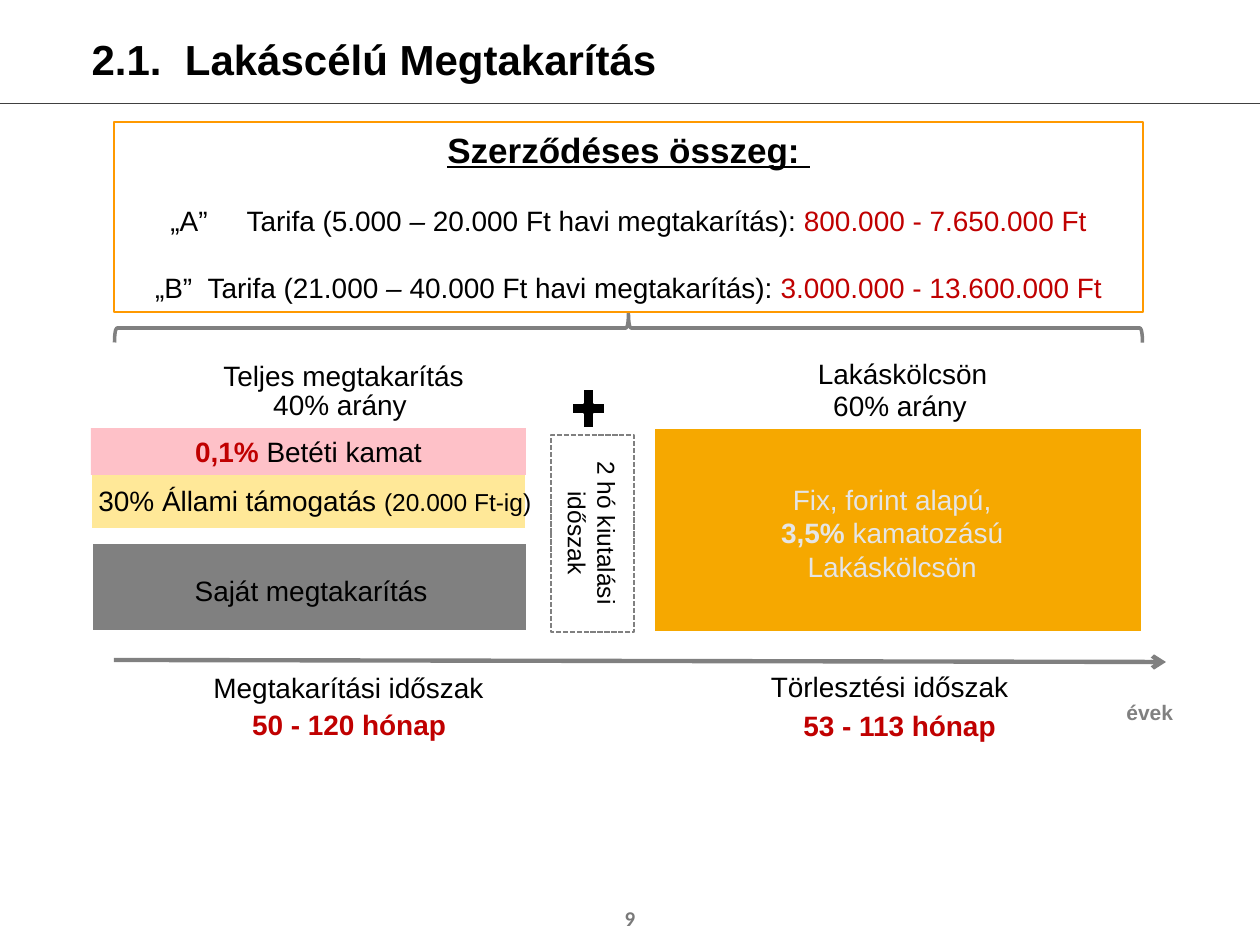
"""Build the home savings slide: contract sum, its two parts and the timeline."""
from dataclasses import dataclass
from typing import Optional

import pptx
import pptx.dml.color
import pptx.enum.dml
import pptx.enum.shapes
import pptx.enum.text
import pptx.oxml
import pptx.oxml.ns
import pptx.util

PX_PER_INCH = 126
SHAPE = pptx.enum.shapes.MSO_SHAPE
ALIGN = pptx.enum.text.PP_ALIGN
ANCHOR = pptx.enum.text.MSO_ANCHOR


@dataclass(frozen=True)
class Theme:
    font: str = "Arial"
    number_font: str = "Calibri"
    ink: str = "000000"
    red: str = "C00000"
    grey: str = "808080"
    number_grey: str = "797979"
    pale: str = "E5E5E5"
    white: str = "FFFFFF"
    rule: str = "404040"
    orange: str = "F6A800"
    frame: str = "FF9900"
    yellow: str = "FFE898"
    pink: str = "FEC1C8"
    title: int = 24
    heading: int = 20
    body: int = 16
    note: int = 14
    small: int = 12


THEME = Theme()


@dataclass(frozen=True)
class Box:
    left: int
    top: int
    width: int
    height: int
    rotation: int = 0


@dataclass(frozen=True)
class Span:
    text: str
    color: str = THEME.ink
    size: int = THEME.body
    bold: bool = False
    italic: bool = False
    underline: bool = False
    font: str = THEME.font
    tracking: int = 0


@dataclass(frozen=True)
class Label:
    box: Box
    lines: list[list[Span]]
    align: ALIGN = ALIGN.CENTER
    anchor: ANCHOR = ANCHOR.TOP
    wrap: bool = True


@dataclass(frozen=True)
class Block:
    box: Box
    fill: Optional[str] = None
    line: Optional[str] = None
    width: float = 1
    kind: SHAPE = SHAPE.RECTANGLE


def px(length: int) -> pptx.util.Emu:
    """Turn pixels into EMU."""
    return pptx.util.Emu(round(length * 914400 / PX_PER_INCH))


def rgb(color: str) -> pptx.dml.color.RGBColor:
    """Turn a hex string into a colour."""
    return pptx.dml.color.RGBColor.from_string(color)


def place(shape, box: Box) -> None:
    """Move, size and turn a shape."""
    shape.left, shape.top = px(box.left), px(box.top)
    shape.width, shape.height = px(box.width), px(box.height)
    shape.rotation = box.rotation


def format_run(run, span: Span) -> None:
    """Apply a span's character formatting to a run."""
    font = run.font
    font.name, font.size = span.font, pptx.util.Pt(span.size)
    font.bold, font.italic, font.underline = span.bold, span.italic, span.underline
    font.color.rgb = rgb(span.color)
    if span.tracking:
        run._r.get_or_add_rPr().set("spc", str(span.tracking))


def write(shape, label: Label, gap: float = 0) -> None:
    """Fill a shape with the label's lines, parted by the gap in points."""
    frame = shape.text_frame
    frame.word_wrap = label.wrap
    frame.auto_size = pptx.enum.text.MSO_AUTO_SIZE.NONE
    frame.vertical_anchor = label.anchor
    for index, spans in enumerate(label.lines):
        paragraph = frame.add_paragraph() if index else frame.paragraphs[0]
        paragraph.alignment = label.align
        if index and gap:
            paragraph.space_before = pptx.util.Pt(gap)
        for span in spans:
            run = paragraph.add_run()
            run.text = span.text
            format_run(run, span)


def add_label(slide, label: Label) -> None:
    """Draw a text box."""
    text_box = slide.shapes.add_textbox(0, 0, 0, 0)
    place(text_box, label.box)
    write(text_box, label)


def add_block(slide, block: Block):
    """Draw a preset shape and return it."""
    shape = slide.shapes.add_shape(block.kind, 0, 0, 0, 0)
    place(shape, block.box)
    shape.shadow.inherit = False
    if block.fill:
        shape.fill.solid()
        shape.fill.fore_color.rgb = rgb(block.fill)
    else:
        shape.fill.background()
    if block.line:
        shape.line.color.rgb = rgb(block.line)
        shape.line.width = pptx.util.Pt(block.width)
    else:
        shape.line.fill.background()
    return shape


def add_line(slide, start: tuple[int, int], end: tuple[int, int], color: str,
             width: float, arrow: bool = False) -> None:
    """Draw a straight line, with an open arrowhead at its end if asked."""
    line = slide.shapes.add_connector(pptx.enum.shapes.MSO_CONNECTOR.STRAIGHT,
                                      *map(px, start), *map(px, end))
    line.line.color.rgb = rgb(color)
    line.line.width = pptx.util.Pt(width)
    properties = line._element.spPr
    if arrow:
        head = pptx.oxml.parse_xml(f'<a:tailEnd {pptx.oxml.ns.nsdecls("a")} type="arrow"/>')
        line.line._get_or_add_ln().append(head)
    properties.append(pptx.oxml.parse_xml(f'<a:effectLst {pptx.oxml.ns.nsdecls("a")}/>'))


def tariff(name: str, tracking: int, low: str, high: str, total: str) -> list[Span]:
    """Compose one tariff line of the contract box."""
    return [Span(name), Span(" ", tracking=tracking), Span(f"Tarifa ({low} "),
            Span("– ", italic=True), Span(f"{high} Ft havi megtakarítás): "),
            Span(total, THEME.red)]


def add_title(slide) -> None:
    """Place and format the title."""
    label = Label(Box(79, 18, 1086, 88),
                  [[Span("2.1.  Lakáscélú Megtakarítás", size=THEME.title, bold=True)]],
                  ALIGN.LEFT, ANCHOR.MIDDLE)
    title = slide.shapes.title
    place(title, label.box)
    write(title, label)
    title.text_frame.paragraphs[0].line_spacing = 0.9


def add_contract(slide) -> None:
    """Draw the contract sum box."""
    box = Box(114, 122, 1029, 190)
    lines = [[Span("Szerződéses összeg: ", size=THEME.heading, bold=True, underline=True)],
             tariff("„A”", 1780, "5.000", "20.000", "800.000 - 7.650.000 Ft"),
             tariff("„B”", 440, "21.000", "40.000", "3.000.000 - 13.600.000 Ft")]
    write(add_block(slide, Block(box, THEME.white, THEME.frame)), Label(box, lines), gap=19)


def main() -> None:
    """Build and save the slide."""
    deck = pptx.Presentation()
    deck.slide_width, deck.slide_height = px(1260), px(945)
    slide = deck.slides.add_slide(deck.slide_layouts[5])
    add_line(slide, (0, 103), (1260, 103), THEME.rule, 0.5)
    add_title(slide)

    add_block(slide, Block(Box(92, 543, 435, 88), THEME.grey, THEME.white))
    add_block(slide, Block(Box(654, 428, 488, 204), THEME.orange, THEME.white))
    add_line(slide, (114, 660), (1166, 662), THEME.grey, 2.5, arrow=True)
    add_block(slide, Block(Box(91, 472, 435, 57), THEME.yellow, THEME.white))
    interest = Box(91, 428, 435, 47)
    write(add_block(slide, Block(interest, THEME.pink)),
          Label(interest, [[Span("0,1% ", THEME.red, bold=True), Span("Betéti kamat")]]))
    waiting = add_block(slide, Block(Box(494, 492, 197, 83, 90), line=THEME.grey))
    waiting.line.dash_style = pptx.enum.dml.MSO_LINE.SQUARE_DOT
    brace = add_block(slide, Block(Box(614, -186, 29, 1028, 270), line=THEME.grey, width=2,
                                   kind=SHAPE.RIGHT_BRACE))
    brace.adjustments[0], brace.adjustments[1] = 0.08, 0.5
    add_block(slide, Block(Box(566, 382, 45, 53), THEME.ink, THEME.white, kind=SHAPE.MATH_PLUS))

    labels = [
        Label(Box(144, 352, 407, 47), [[Span("Teljes megtakarítás ")]]),
        Label(Box(248, 381, 184, 47), [[Span("40% arány")]]),
        Label(Box(699, 350, 407, 47), [[Span("Lakáskölcsön")]]),
        Label(Box(808, 382, 184, 47), [[Span("60% arány")]]),
        Label(Box(83, 477, 464, 47), [[Span("30% Állami támogatás "),
                                       Span("(20.000 Ft-ig)", size=THEME.note)]]),
        Label(Box(92, 567, 446, 47), [[Span("Saját megtakarítás ")]]),
        Label(Box(470, 497, 244, 72, 90), [[Span("2 hó kiutalási időszak", size=THEME.note)]]),
        Label(Box(699, 476, 394, 140), [
            [Span("Fix, forint alapú, ", THEME.pale)],
            [Span("3,5% ", THEME.pale, bold=True), Span("kamatozású ", THEME.pale)],
            [Span("Lakáskölcsön ", THEME.pale)]]),
        Label(Box(124, 664, 449, 47), [[Span("Megtakarítási időszak")]]),
        Label(Box(665, 663, 449, 47), [[Span("Törlesztési időszak")]]),
        Label(Box(238, 701, 222, 47), [[Span("50 - 120 hónap", THEME.red, bold=True)]], wrap=False),
        Label(Box(789, 702, 221, 47), [[Span("53 - 113 hónap", THEME.red, bold=True)]], wrap=False),
        Label(Box(1114, 693, 120, 38), [[Span("évek", THEME.grey, THEME.small, True)]], ALIGN.LEFT),
        Label(Box(488, 893, 284, 50), [[Span("9", THEME.number_grey, THEME.small, True,
                                             font=THEME.number_font)]], anchor=ANCHOR.MIDDLE),
    ]
    for label in labels:
        add_label(slide, label)
    add_contract(slide)
    deck.save("out.pptx")


if __name__ == "__main__":
    main()
